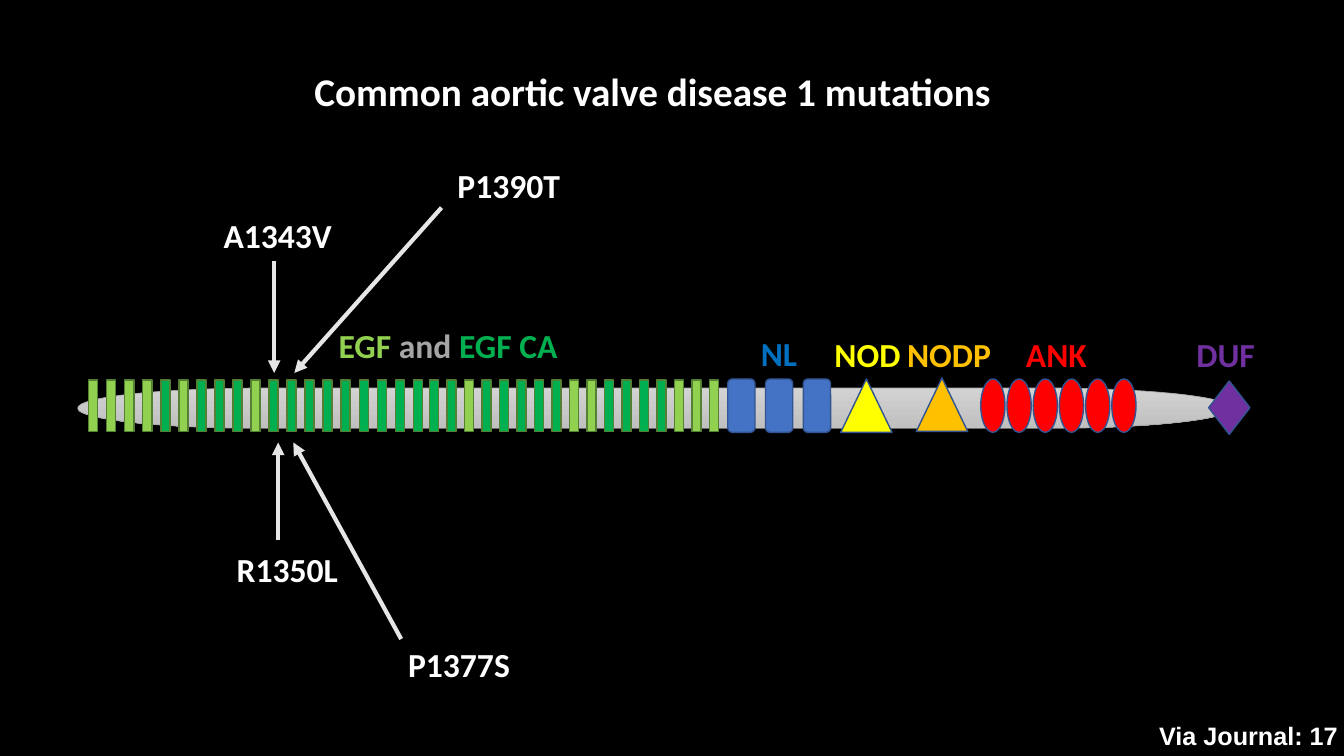
"""Draw the protein domain map with common aortic valve disease 1 mutations."""
from lxml.etree import SubElement
from pptx import Presentation
from pptx.dml.color import RGBColor
from pptx.enum.shapes import MSO_CONNECTOR, MSO_SHAPE
from pptx.enum.text import MSO_AUTO_SIZE
from pptx.oxml.ns import qn
from pptx.util import Inches, Pt

COLUMNS, ROWS = 133.33, 75
CELL = Inches(0.1)

BLACK = RGBColor(0x00, 0x00, 0x00)
WHITE = RGBColor(0xFF, 0xFF, 0xFF)
LIGHT_GREEN = RGBColor(0x92, 0xD0, 0x50)
GREEN = RGBColor(0x00, 0xB0, 0x50)
DARK_GREEN = RGBColor(0x53, 0x80, 0x35)
GRAY = RGBColor(0xA5, 0xA5, 0xA5)
BLUE = RGBColor(0x44, 0x72, 0xC4)
DEEP_BLUE = RGBColor(0x00, 0x70, 0xC0)
NAVY = RGBColor(0x32, 0x54, 0x91)
YELLOW = RGBColor(0xFF, 0xFF, 0x00)
ORANGE = RGBColor(0xFF, 0xC0, 0x00)
RED = RGBColor(0xFF, 0x00, 0x00)
PURPLE = RGBColor(0x70, 0x30, 0xA0)
ARROW_GRAY = RGBColor(0xE7, 0xE6, 0xE6)
BACKBONE_TOP = RGBColor(0xD2, 0xD2, 0xD2)
BACKBONE_BOTTOM = RGBColor(0xC0, 0xC0, 0xC0)

BACKBONE = (7.7, 38.5, 114.5, 4)
EGF_COLORS = {"E": LIGHT_GREEN, "C": GREEN}
EGF_RUNS = [
    (8.8, 41, "EEEECECCCECCCCCCCCC"),
    (42.6, 70.4, "CCECCCCCEECCCCEEE"),
]
EGF_ROW, EGF_WIDTH, EGF_HEIGHT = 37.7, 0.9, 5.1

DOMAINS = [
    (MSO_SHAPE.ROUNDED_RECTANGLE, BLUE, 72.2, 37.6, 2.7, 3, 3.75),
    (MSO_SHAPE.ISOSCELES_TRIANGLE, YELLOW, 83.4, 37.6, 5.1, 1, 0),
    (MSO_SHAPE.ISOSCELES_TRIANGLE, ORANGE, 90.9, 37.5, 5.1, 1, 0),
    (MSO_SHAPE.OVAL, RED, 97.3, 37.6, 2.4, 6, 2.6),
    (MSO_SHAPE.DIAMOND, PURPLE, 119.9, 37.8, 4.1, 1, 0),
]
DOMAIN_HEIGHT = 5.3

LABELS = [
    ((32.6, 31.7, 23.9), [("EGF ", LIGHT_GREEN), ("and ", GRAY), ("EGF CA", GREEN)]),
    ((74.5, 32.5, 5.7), [("NL", DEEP_BLUE)]),
    ((81.8, 32.6, 8.6), [("NOD", YELLOW)]),
    ((89, 32.6, 10.4), [("NODP", ORANGE)]),
    ((100.8, 32.6, 8.3), [("ANK", RED)]),
    ((117.7, 32.6, 8.9), [("DUF", PURPLE)]),
]
MUTATIONS = [
    ("A1343V", (21.2, 20.8), (27.2, 25.9), (27.2, 37)),
    ("R1350L", (22.5, 54), (27.6, 53.6), (27.6, 43.9)),
    ("P1377S", (39.5, 63.4), (39.8, 63.4), (29.1, 43.9)),
    ("P1390T", (44.4, 15.9), (43.8, 20.6), (29.2, 37)),
]
MUTATION_WIDTH = 13.2
TITLE = "Common aortic valve disease 1 mutations"
CREDIT = "Via Journal: 17"


def cells(*lengths):
    return [round(length * CELL) for length in lengths]


def add_domain(slide, kind, box, color, outline, weight=1):
    domain = slide.shapes.add_shape(kind, *cells(*box))
    domain.shadow.inherit = False
    domain.fill.solid()
    domain.fill.fore_color.rgb = color
    domain.line.color.rgb = outline
    domain.line.width = Pt(weight)
    return domain


def add_label(slide, box, parts, size=24, font="Calibri"):
    frame = slide.shapes.add_textbox(*cells(*box)).text_frame
    frame.word_wrap = True
    frame.auto_size = MSO_AUTO_SIZE.SHAPE_TO_FIT_TEXT
    frame.margin_right = 0
    for words, color in parts:
        run = frame.paragraphs[0].add_run()
        run.text = words
        run.font.name = font
        run.font.size = Pt(size)
        run.font.bold = True
        run.font.color.rgb = color


def add_arrow(slide, start, end):
    arrow = slide.shapes.add_connector(MSO_CONNECTOR.STRAIGHT, *cells(*start, *end))
    arrow.line.color.rgb = ARROW_GRAY
    arrow.line.width = Pt(3)
    SubElement(arrow.line._get_or_add_ln(), qn("a:tailEnd"), type="triangle")
    SubElement(arrow._element.spPr, qn("a:effectLst"))


def add_backbone(slide):
    backbone = add_domain(slide, MSO_SHAPE.FLOWCHART_TERMINATOR, BACKBONE, GRAY, GRAY, 0.5)
    backbone.fill.gradient()
    backbone.fill.gradient_angle = 270
    shades = (BACKBONE_TOP, BACKBONE_BOTTOM)
    for stop, position, shade in zip(backbone.fill.gradient_stops, (0, 1), shades):
        stop.position = position
        stop.color.rgb = shade


def main():
    deck = Presentation()
    deck.slide_width, deck.slide_height = cells(COLUMNS, ROWS)
    slide = deck.slides.add_slide(deck.slide_layouts[6])
    slide.background.fill.solid()
    slide.background.fill.fore_color.rgb = BLACK

    add_backbone(slide)
    for first, last, repeats in EGF_RUNS:
        pitch = (last - first) / (len(repeats) - 1)
        for index, repeat in enumerate(repeats):
            box = (first + index * pitch, EGF_ROW, EGF_WIDTH, EGF_HEIGHT)
            add_domain(slide, MSO_SHAPE.RECTANGLE, box, EGF_COLORS[repeat], DARK_GREEN)
    for kind, color, column, row, width, count, pitch in DOMAINS:
        for index in range(count):
            box = (column + index * pitch, row, width, DOMAIN_HEIGHT)
            add_domain(slide, kind, box, color, NAVY)

    for place, parts in LABELS:
        add_label(slide, (*place, 5), parts)
    for mutation, place, start, end in MUTATIONS:
        add_arrow(slide, start, end)
        add_label(slide, (*place, MUTATION_WIDTH, 5), [(mutation, WHITE)])
    add_label(slide, (30.2, 6.2, 72.8, 5.7), [(TITLE, WHITE)], size=28)
    add_label(slide, (114, 71, 19.3, 4), [(CREDIT, WHITE)], size=18, font="Arial")
    deck.save("out.pptx")


if __name__ == "__main__":
    main()
